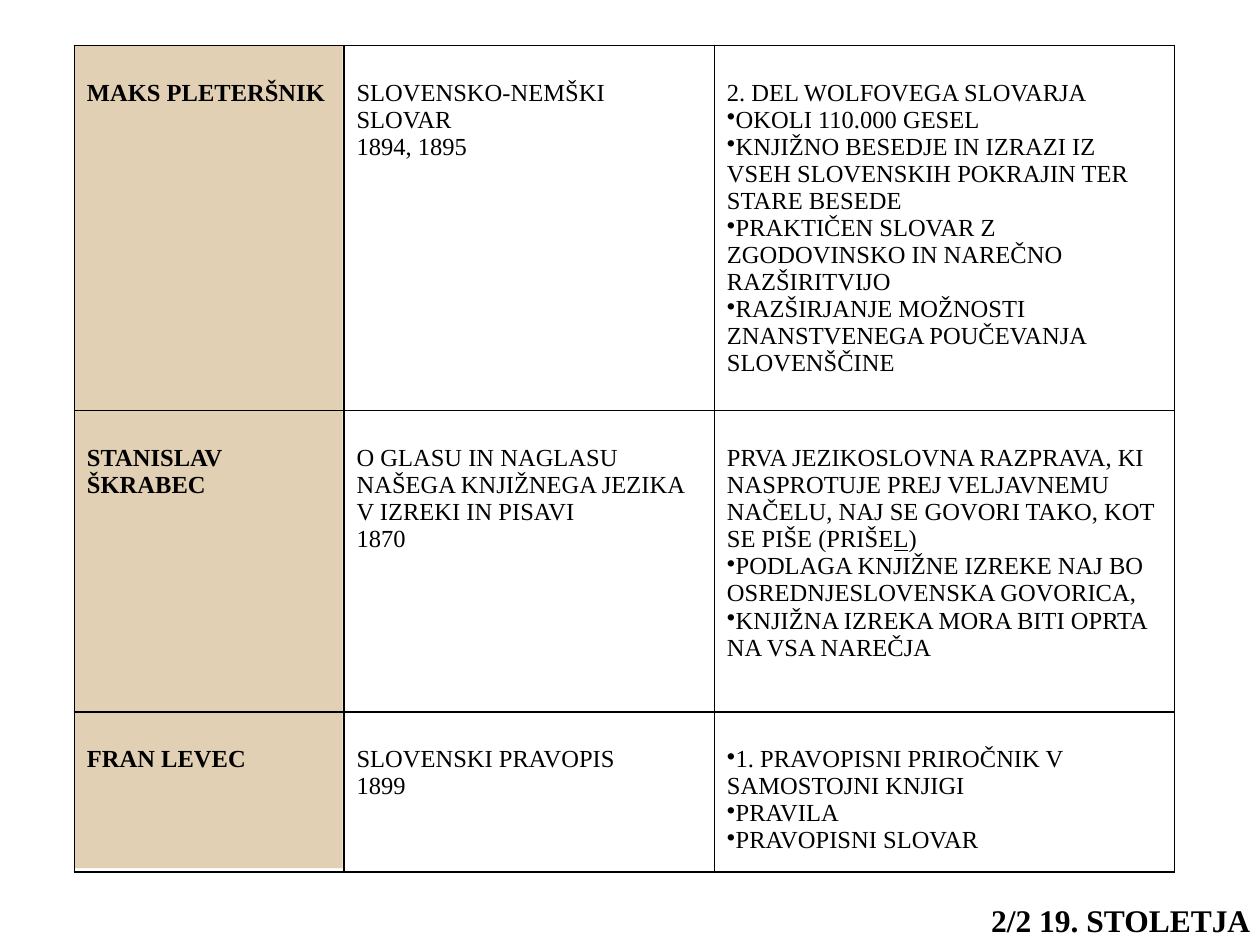
from lxml import etree
from pptx import Presentation
from pptx.dml.color import RGBColor
from pptx.enum import shapes, text
from pptx.oxml import ns
from pptx.util import Inches, Pt

FONT = "Times New Roman"
BLACK = RGBColor(0x00, 0x00, 0x00)
SAND = RGBColor(0xD5, 0xBA, 0x93)

LEFT, TOP = 0.59, 0.36
COL_WIDTHS = (2.14, 2.94, 3.65)
ROW_HEIGHTS = (2.9, 2.39, 1.27)

# Each row: author, work, description lines, bulleted lines.
# Underscores enclose underlined letters.
ROWS = (
    (
        "MAKS PLETERŠNIK",
        ("SLOVENSKO-NEMŠKI SLOVAR", "1894, 1895"),
        ("2. DEL WOLFOVEGA SLOVARJA",),
        (
            "OKOLI 110.000 GESEL",
            "KNJIŽNO BESEDJE IN IZRAZI IZ VSEH SLOVENSKIH POKRAJIN TER STARE BESEDE",
            "PRAKTIČEN SLOVAR Z ZGODOVINSKO IN NAREČNO RAZŠIRITVIJO",
            "RAZŠIRJANJE MOŽNOSTI ZNANSTVENEGA POUČEVANJA SLOVENŠČINE",
        ),
    ),
    (
        "STANISLAV ŠKRABEC",
        ("O GLASU IN NAGLASU NAŠEGA KNJIŽNEGA JEZIKA V IZREKI IN PISAVI", "1870"),
        (
            "PRVA JEZIKOSLOVNA RAZPRAVA, KI NASPROTUJE PREJ VELJAVNEMU NAČELU, "
            "NAJ SE GOVORI TAKO, KOT SE PIŠE (PRIŠE_L_)",
        ),
        (
            "PODLAGA KNJIŽNE IZREKE NAJ BO OSREDNJESLOVENSKA GOVORICA,",
            "KNJIŽNA IZREKA MORA BITI OPRTA NA VSA NAREČJA",
        ),
    ),
    (
        "FRAN LEVEC",
        ("SLOVENSKI PRAVOPIS", "1899"),
        (),
        ("1. PRAVOPISNI PRIROČNIK V SAMOSTOJNI KNJIGI", "PRAVILA", "PRAVOPISNI SLOVAR"),
    ),
)


def add_sub(parent, tag, **attrs):
    return etree.SubElement(parent, ns.qn(tag), attrs)


def add_text(tf, line, size=14, bold=False, bullet=False, align=text.PP_ALIGN.LEFT):
    """Fill the first paragraph if it is empty, otherwise append one."""
    p = tf.paragraphs[0]
    if p.runs:
        p = tf.add_paragraph()
    p.alignment = align
    if bullet:
        pPr = p._p.get_or_add_pPr()
        pPr.set("marL", "0")
        pPr.set("indent", "0")
        add_sub(pPr, "a:buChar", char="•")
    for i, part in enumerate(line.split("_")):
        r = p.add_run()
        r.text = part
        r.font.name = FONT
        r.font.size = Pt(size)
        r.font.bold = bold
        r.font.color.rgb = BLACK
        if i % 2:
            r.font.underline = True


def add_band(slide):
    """Translucent band behind the author column."""
    sp = slide.shapes.add_shape(
        shapes.MSO_SHAPE.RECTANGLE,
        Inches(LEFT), Inches(TOP), Inches(2.13), Inches(6.53),
    )
    sp.shadow.inherit = False
    sp.line.fill.background()
    sp.fill.solid()
    sp.fill.fore_color.rgb = SAND
    color = sp._element.spPr.find(".//" + ns.qn("a:srgbClr"))
    add_sub(color, "a:alpha", val="68000")


def style_cell(cell):
    tcPr = cell._tc.get_or_add_tcPr()
    for side in ("L", "R", "T", "B"):
        ln = add_sub(tcPr, f"a:ln{side}", w=str(Pt(1)))
        fill = add_sub(ln, "a:solidFill")
        add_sub(fill, "a:srgbClr", val=str(BLACK))
    cell.fill.background()
    cell.margin_top = Inches(0.27)


def add_authors_table(slide):
    table = slide.shapes.add_table(
        len(ROWS), len(COL_WIDTHS), Inches(LEFT), Inches(TOP),
        Inches(sum(COL_WIDTHS)), Inches(sum(ROW_HEIGHTS)),
    ).table
    table.first_row = table.horz_banding = False
    for col, width in zip(table.columns, COL_WIDTHS):
        col.width = Inches(width)
    for row, height, (author, work, lines, bullets) in zip(table.rows, ROW_HEIGHTS, ROWS):
        row.height = Inches(height)
        for cell in row.cells:
            style_cell(cell)
        name_tf, work_tf, notes_tf = (cell.text_frame for cell in row.cells)
        add_text(name_tf, author, bold=True)
        for line in work:
            add_text(work_tf, line)
        for line in lines:
            add_text(notes_tf, line)
        for line in bullets:
            add_text(notes_tf, line, bullet=True)


def add_page_label(slide):
    box = slide.shapes.add_textbox(Inches(7.74), Inches(7.1), Inches(2.31), Inches(0.4))
    tf = box.text_frame
    tf.word_wrap = False
    tf.auto_size = text.MSO_AUTO_SIZE.SHAPE_TO_FIT_TEXT
    add_text(tf, "2/2 19. STOLETJA", size=18, bold=True, align=text.PP_ALIGN.CENTER)


def main():
    prs = Presentation()
    prs.slide_width, prs.slide_height = Inches(10), Inches(7.5)
    slide = prs.slides.add_slide(prs.slide_layouts[6])
    add_band(slide)
    add_page_label(slide)
    add_authors_table(slide)
    prs.save("out.pptx")


if __name__ == "__main__":
    main()
